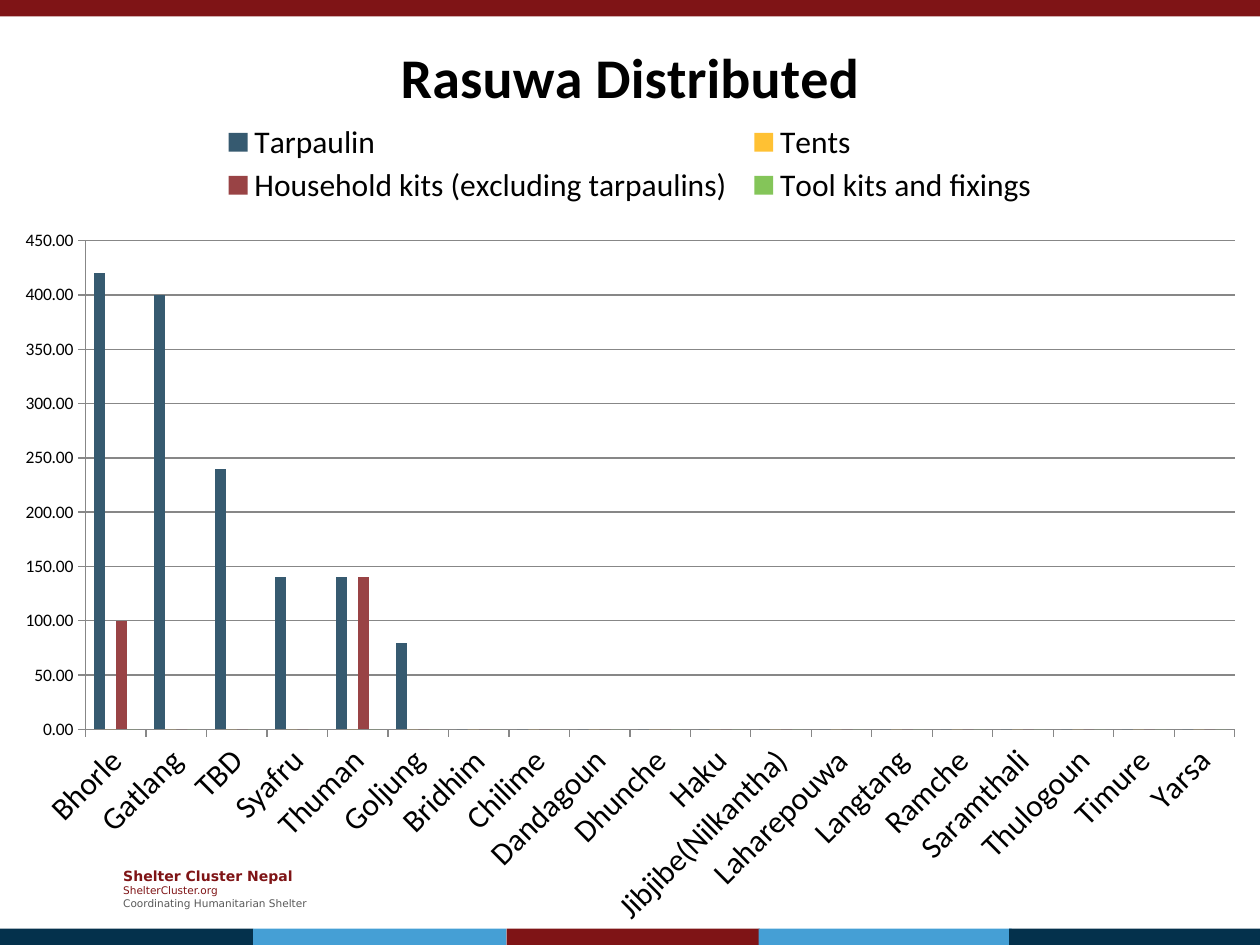
from dataclasses import dataclass

from lxml import etree
from pptx import Presentation
from pptx import util as u
from pptx.chart import data as cd
from pptx.dml import color as col
from pptx.enum import chart as ch
from pptx.enum import shapes, text
from pptx.oxml import ns


@dataclass(frozen=True)
class Theme:
    red: str = "7F1416"
    navy: str = "04314C"
    sky: str = "459FD5"
    gray: str = "595959"
    grid: str = "878787"
    black: str = "000000"
    font: str = "Calibri"
    brand: str = "DejaVu Sans"
    head: int = 32
    label: int = 18
    tick: int = 10
    name: int = 8
    small: int = 6


theme = Theme()


def style(font, size, color, face=theme.font, bold=False):
    font.size = u.Pt(size)
    font.name = face
    font.bold = bold
    font.color.rgb = col.RGBColor.from_string(color)


def layout(node, after, left, top, width=None, height=None):
    for old in node.findall(ns.qn("c:layout")):
        node.remove(old)
    outer = etree.Element(ns.qn("c:layout"))
    manual = etree.SubElement(outer, ns.qn("c:manualLayout"))
    if after is None:
        etree.SubElement(manual, ns.qn("c:layoutTarget"), val="inner")
        node.insert(0, outer)
    else:
        node.find(ns.qn(after)).addnext(outer)
    for key in ("xMode", "yMode"):
        etree.SubElement(manual, ns.qn(f"c:{key}"), val="edge")
    sides = [("x", left, 10), ("y", top, 7.5), ("w", width, 10), ("h", height, 7.5)]
    for key, size, whole in sides:
        if size is not None:
            etree.SubElement(manual, ns.qn(f"c:{key}"), val=str(size / whole))


prs = Presentation()
prs.slide_width = u.Inches(10)
prs.slide_height = u.Inches(7.5)
slide = prs.slides.add_slide(prs.slide_layouts[6])

box = slide.shapes.add_textbox(u.Inches(0.88), u.Inches(6.83), u.Inches(1.73), u.Inches(0.44))
frame = box.text_frame
frame.word_wrap = True
frame.vertical_anchor = text.MSO_ANCHOR.MIDDLE
frame.margin_top = frame.margin_bottom = 0
frame.margin_left = u.Inches(0.1)
frame.margin_right = 0
lines = [
    ("Shelter Cluster Nepal", theme.name, theme.red, True),
    ("ShelterCluster.org", theme.small, theme.red, False),
    ("Coordinating Humanitarian Shelter", theme.small, theme.gray, False),
]
for i, (words, size, color, bold) in enumerate(lines):
    para = frame.add_paragraph() if i else frame.paragraphs[0]
    run = para.add_run()
    run.text = words
    style(run.font, size, color, theme.brand, bold)

bars = [
    (0, 0, 10, theme.red),
    (0, 7.37, 2.01, theme.navy),
    (2.01, 7.37, 2.01, theme.sky),
    (4.02, 7.37, 2.01, theme.red),
    (6.02, 7.37, 2.01, theme.sky),
    (8.01, 7.37, 2.01, theme.navy),
]
for left, top, width, color in bars:
    bar = slide.shapes.add_shape(
        shapes.MSO_SHAPE.RECTANGLE,
        u.Inches(left), u.Inches(top), u.Inches(width), u.Inches(0.13))
    bar.shadow.inherit = False
    bar.fill.solid()
    bar.fill.fore_color.rgb = col.RGBColor.from_string(color)
    bar.line.fill.background()

places = [
    "Bhorle", "Gatlang", "TBD", "Syafru", "Thuman", "Goljung", "Bridhim",
    "Chilime", "Dandagoun", "Dhunche", "Haku", "Jibjibe(Nilkantha)",
    "Laharepouwa", "Langtang", "Ramche", "Saramthali", "Thulogoun",
    "Timure", "Yarsa",
]
items = [
    ("Tarpaulin", "365A70", [420, 400, 240, 140, 140, 80]),
    ("Tents", "FFC133", []),
    ("Household kits (excluding tarpaulins)", "994345", [100, 0, 0, 0, 140]),
    ("Tool kits and fixings", "84C559", []),
]
data = cd.CategoryChartData(number_format="#,##0.00")
data.categories = places
for name, color, vals in items:
    data.add_series(name, vals + [0] * (len(places) - len(vals)))

chart = slide.shapes.add_chart(
    ch.XL_CHART_TYPE.COLUMN_CLUSTERED, 0, 0,
    prs.slide_width, prs.slide_height, data).chart
style(chart.font, theme.tick, theme.black)

chart.has_title = True
title = chart.chart_title
run = title.text_frame.paragraphs[0].add_run()
run.text = "Rasuwa Distributed"
style(run.font, theme.head, theme.black, bold=True)
title.include_in_layout = False

plot = chart.plots[0]
plot.gap_width = 150
plot.overlap = 0
plot.vary_by_categories = False
for series, (name, color, vals) in zip(plot.series, items):
    series.format.fill.solid()
    series.format.fill.fore_color.rgb = col.RGBColor.from_string(color)

chart.has_legend = True
legend = chart.legend
legend.position = ch.XL_LEGEND_POSITION.TOP
legend.include_in_layout = False
style(legend.font, theme.label, theme.black)

cats, vals = chart.category_axis, chart.value_axis
vals.minimum_scale, vals.maximum_scale, vals.major_unit = 0, 450, 50
vals.has_major_gridlines = True
vals.tick_labels.number_format = "#,##0.00"
vals.tick_labels.number_format_is_linked = False
style(vals.tick_labels.font, theme.tick, theme.black)
style(cats.tick_labels.font, theme.label, theme.black)
for part in (cats, vals, vals.major_gridlines):
    part.format.line.width = u.Pt(0.75)
    part.format.line.color.rgb = col.RGBColor.from_string(theme.grid)
for axis in (cats, vals):
    axis.major_tick_mark = ch.XL_TICK_MARK.OUTSIDE
    axis.minor_tick_mark = ch.XL_TICK_MARK.NONE
cats._element.find(".//" + ns.qn("a:bodyPr")).set("rot", "-2700000")

area = chart._chartSpace.find(".//" + ns.qn("c:plotArea"))
layout(area, None, 0.68, 1.91, 9.12, 3.88)
layout(title._element, "c:tx", 3.1, 0.22)
layout(legend._element, "c:legendPos", 1.68, 0.94, 6.64, 0.72)

prs.save("out.pptx")
